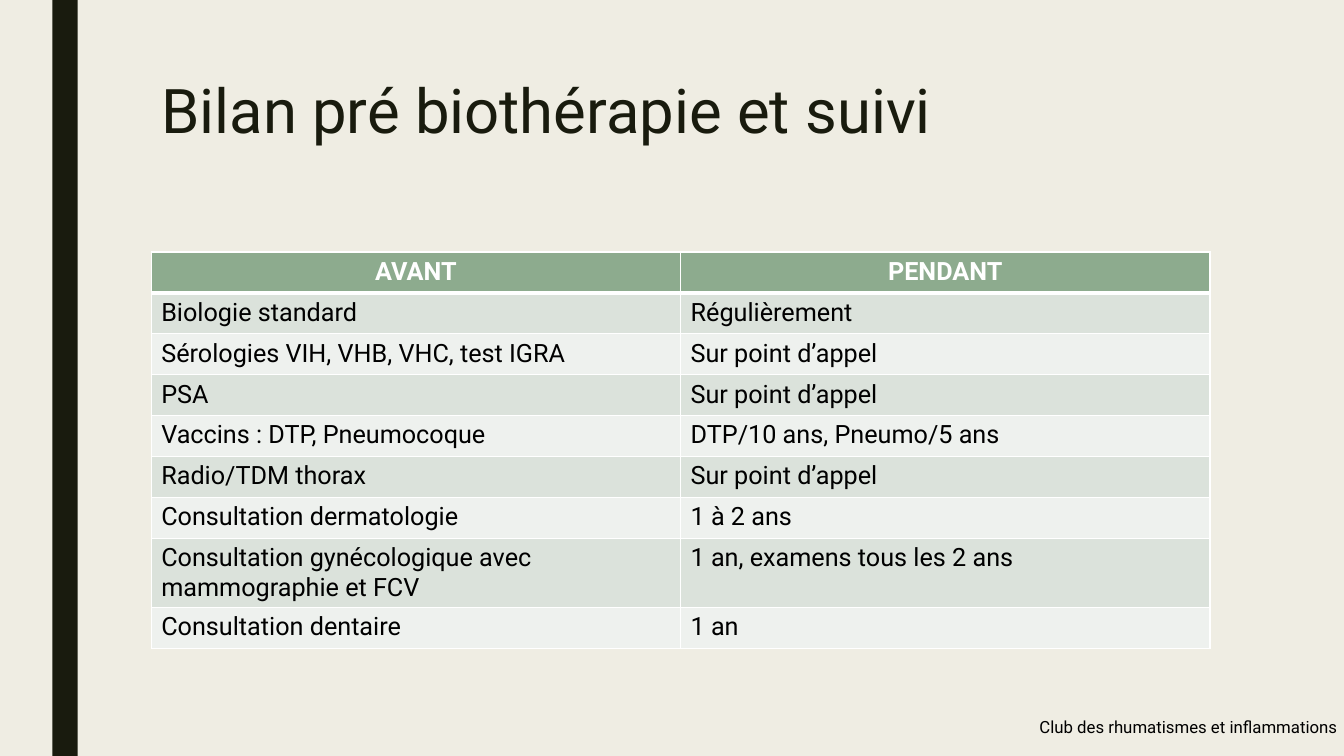
"""Build the slide on checks before and during biotherapy."""
from typing import NamedTuple

from lxml import etree
from pptx import Presentation
from pptx.dml.color import RGBColor
from pptx.enum.shapes import MSO_SHAPE
from pptx.enum.text import MSO_ANCHOR, MSO_AUTO_SIZE, PP_ALIGN
from pptx.oxml.ns import qn
from pptx.util import Inches, Pt

RECT = MSO_SHAPE.RECTANGLE
TOP = MSO_ANCHOR.TOP
GROW = MSO_AUTO_SIZE.SHAPE_TO_FIT_TEXT
FIXED = MSO_AUTO_SIZE.NONE
LEFT, CENTER = PP_ALIGN.LEFT, PP_ALIGN.CENTER

CREAM = RGBColor(0xEF, 0xED, 0xE3)
DARK = RGBColor(0x19, 0x1B, 0x0E)
GREEN = RGBColor(0x8D, 0xAB, 0x8E)
SAGE = RGBColor(0xDB, 0xE2, 0xDB)
PALE = RGBColor(0xEE, 0xF1, 0xEE)
WHITE = RGBColor(0xFF, 0xFF, 0xFF)
BLACK = RGBColor(0x00, 0x00, 0x00)
FONT = "Roboto"
TITLE_ONLY = 5


class Check(NamedTuple):
    before: str
    during: str


class Style(NamedTuple):
    fill: RGBColor
    color: RGBColor = BLACK
    bold: bool = False
    align: PP_ALIGN = LEFT


HEAD = Style(GREEN, WHITE, True, CENTER)
BANDS = (Style(PALE), Style(SAGE))
CHECKS = [
    Check("AVANT", "PENDANT"),
    Check("Biologie standard", "Régulièrement"),
    Check("Sérologies VIH, VHB, VHC, test IGRA", "Sur point d’appel"),
    Check("PSA", "Sur point d’appel"),
    Check("Vaccins : DTP, Pneumocoque", "DTP/10 ans, Pneumo/5 ans"),
    Check("Radio/TDM thorax", "Sur point d’appel"),
    Check("Consultation dermatologie", "1 à 2 ans"),
    Check("Consultation gynécologique avec mammographie et FCV",
          "1 an, examens tous les 2 ans"),
    Check("Consultation dentaire", "1 an"),
]


def set_font(para, size: int, color: RGBColor, bold: bool = False) -> None:
    font = para.font
    font.name, font.size, font.bold = FONT, Pt(size), bold
    font.color.rgb = color


def add_edge(cell, side: str, width: int) -> None:
    props = cell._tc.get_or_add_tcPr()
    line = etree.SubElement(props, qn(f"a:ln{side}"), w=str(Pt(width)))
    fill = etree.SubElement(line, qn("a:solidFill"))
    etree.SubElement(fill, qn("a:srgbClr"), val=str(WHITE))


def fill_cell(cell, text: str, row: int) -> None:
    style = BANDS[row % 2] if row else HEAD
    thick = {0: "B", 1: "T"}.get(row)
    for side in "LRTB":
        add_edge(cell, side, 3 if side == thick else 1)
    cell.fill.solid()
    cell.fill.fore_color.rgb = style.fill
    cell.text = text
    para = cell.text_frame.paragraphs[0]
    para.alignment = style.align
    set_font(para, 18, style.color, style.bold)


def add_bar(slide) -> None:
    bar = slide.shapes.add_shape(
        RECT, Inches(0.52), Inches(0), Inches(0.25), Inches(7.5))
    bar.shadow.inherit = False
    bar.fill.solid()
    bar.fill.fore_color.rgb = DARK
    bar.line.fill.background()


def add_title(slide) -> None:
    title = slide.shapes.title
    title.left, title.top = Inches(1.5), Inches(0.75)
    title.width, title.height = Inches(10.5), Inches(1.62)
    frame = title.text_frame
    frame.text = "Bilan pré biothérapie et suivi"
    frame.vertical_anchor = TOP
    frame.auto_size = FIXED
    para = frame.paragraphs[0]
    para.alignment, para.line_spacing = LEFT, 0.89
    set_font(para, 44, DARK)


def add_checks(slide) -> None:
    table = slide.shapes.add_table(
        len(CHECKS), 2, Inches(1.5), Inches(2.5),
        Inches(10.5), Inches(3.65)).table
    for row, check in enumerate(CHECKS):
        for col, text in enumerate(check):
            fill_cell(table.cell(row, col), text, row)


def add_credit(slide) -> None:
    box = slide.shapes.add_textbox(
        Inches(10.21), Inches(7.06), Inches(3.18), Inches(0.3))
    frame = box.text_frame
    frame.text = "Club des rhumatismes et inflammations"
    frame.word_wrap = False
    frame.auto_size = GROW
    set_font(frame.paragraphs[0], 12, BLACK)


def main() -> None:
    deck = Presentation()
    deck.slide_width, deck.slide_height = Inches(13.33), Inches(7.5)
    slide = deck.slides.add_slide(deck.slide_layouts[TITLE_ONLY])
    back = slide.background.fill
    back.solid()
    back.fore_color.rgb = CREAM
    add_bar(slide)
    add_title(slide)
    add_checks(slide)
    add_credit(slide)
    deck.save("out.pptx")


if __name__ == "__main__":
    main()
